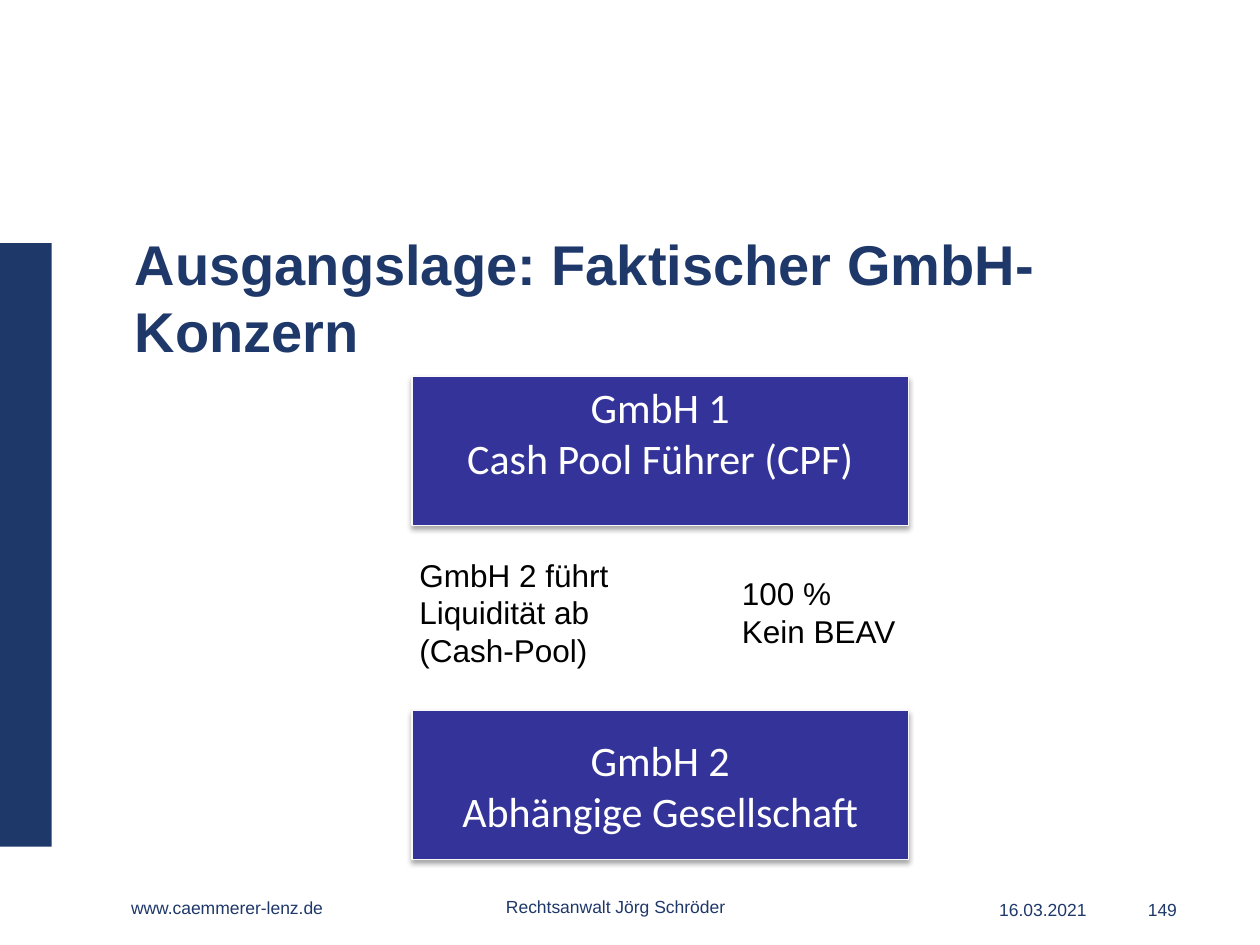
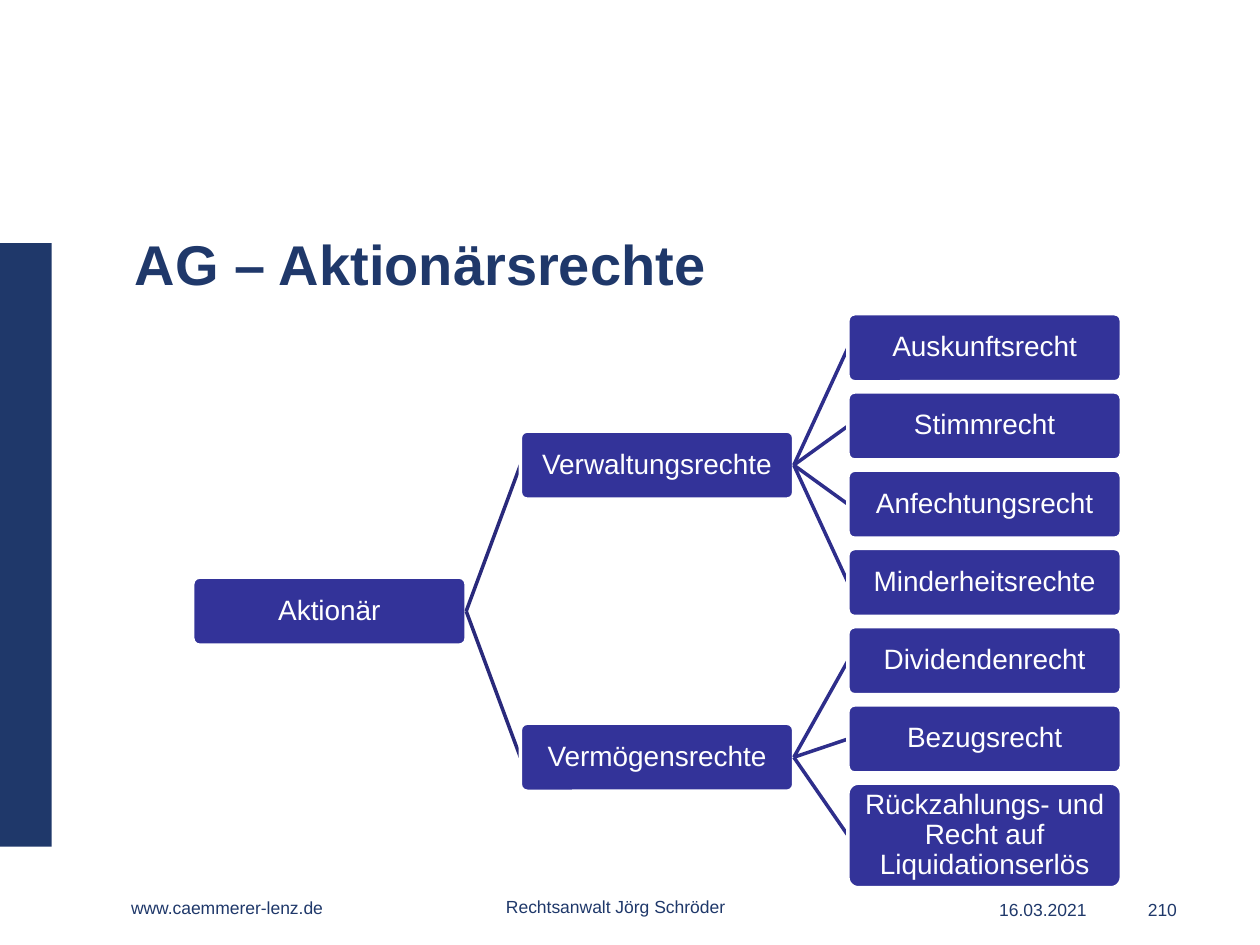
from lxml.etree import SubElement
from pptx import Presentation
from pptx.dml.color import RGBColor
from pptx.enum.shapes import MSO_CONNECTOR, MSO_SHAPE
from pptx.enum.text import MSO_ANCHOR, MSO_AUTO_SIZE, PP_ALIGN
from pptx.oxml import parse_xml
from pptx.oxml.ns import nsdecls, qn
from pptx.util import Inches, Pt

UNIT = Inches(0.1)
NAVY, INDIGO, WHITE, BLACK = "1F386A", "333399", "FFFFFF", "000000"
rgb = RGBColor.from_string


def grid(*cells):
    return [round(cell * UNIT) for cell in cells]


def write(shape, text, size=18, color=BLACK, font="Arial", bold=False,
          align=PP_ALIGN.LEFT, anchor=MSO_ANCHOR.TOP, spacing=1.0, insets=(1, 0.5, 1, 0.5)):
    frame = shape.text_frame
    frame.text = text
    frame.word_wrap = True
    frame.auto_size = MSO_AUTO_SIZE.NONE
    frame.vertical_anchor = anchor
    frame.margin_left, frame.margin_top, frame.margin_right, frame.margin_bottom = grid(*insets)
    for paragraph in frame.paragraphs:
        paragraph.alignment = align
        paragraph.line_spacing = spacing
        paragraph.font.size = Pt(size)
        paragraph.font.name = font
        paragraph.font.bold = bold
        paragraph.font.color.rgb = rgb(color)


deck = Presentation()
deck.slide_width, deck.slide_height = grid(100, 75)

slides = []
for heading, number in [("Ausgangslage: Faktischer GmbH-Konzern", "149"),
                        ("AG – Aktionärsrechte", "210")]:
    slide = deck.slides.add_slide(deck.slide_layouts[5])
    slides.append(slide)

    band = slide.shapes.add_shape(MSO_SHAPE.RECTANGLE, *grid(0, 19.3, 4.1, 47.9))
    band.shadow.inherit = False
    band.fill.solid()
    band.fill.fore_color.rgb = rgb(NAVY)
    band.line.fill.background()

    title = slide.shapes.title
    title.left, title.top, title.width, title.height = grid(9.8, 17.8, 83.6, 8.3)
    write(title, heading, size=32, color=NAVY, bold=True, insets=(0.9, 0.4, 0.9, 0.4))

    for note, left, top, width, align in [
        ("www.caemmerer-lenz.de", 10.4, 70.9, 18.4, PP_ALIGN.LEFT),
        ("Rechtsanwalt Jörg Schröder", 39, 70.8, 19.7, PP_ALIGN.CENTER),
        ("16.03.2021", 79.3, 71, 10.5, PP_ALIGN.LEFT),
        (number, 91.1, 71, 8.9, PP_ALIGN.LEFT),
    ]:
        footer = slide.shapes.add_textbox(*grid(left, top, width, 4))
        write(footer, note, size=10, color=NAVY, align=align, spacing=1.2, insets=(0, 0, 0, 0))

group_slide, rights_slide = slides

for company, top, bottom_inset in [("GmbH 2\nAbhängige Gesellschaft", 56.4, 0.4),
                                   ("GmbH 1\nCash Pool Führer (CPF)", 29.9, 3.4)]:
    company_box = group_slide.shapes.add_shape(MSO_SHAPE.RECTANGLE, *grid(32.7, top, 39.4, 11.8))
    company_box.fill.solid()
    company_box.fill.fore_color.rgb = rgb(INDIGO)
    company_box.line.color.rgb = rgb("F9F9F9")
    company_box.line.width = Pt(0.75)
    company_box._element.spPr.append(parse_xml(
        f'<a:effectLst {nsdecls("a")}><a:outerShdw blurRad="{Pt(3.1)}" dist="{Pt(1.8)}" '
        f'dir="5400000" rotWithShape="0"><a:srgbClr val="{BLACK}"><a:alpha val="35000"/>'
        '</a:srgbClr></a:outerShdw></a:effectLst>'))
    write(company_box, company, size=24, color=WHITE, font="Calibri", align=PP_ALIGN.CENTER,
          anchor=MSO_ANCHOR.MIDDLE, insets=(0.9, 0.4, 0.9, bottom_inset))

for remark, cell in [("100 %\nKein BEAV", (57.9, 45.1, 15.7, 7.1)),
                     ("GmbH 2 führt Liquidität ab (Cash-Pool)", (32.3, 43.6, 18.1, 10.1))]:
    write(group_slide.shapes.add_textbox(*grid(*cell)), remark)

SHAREHOLDER = "Aktionär"
rights = {
    "Verwaltungsrechte": ["Auskunftsrecht", "Stimmrecht", "Anfechtungsrecht", "Minderheitsrechte"],
    "Vermögensrechte": ["Dividendenrecht", "Bezugsrecht",
                        "Rückzahlungs- und Recht auf Liquidationserlös"],
}
NODE_WIDTH, NODE_HEIGHT, TALL_HEIGHT = 21.7, 5.4, 8.3
FIRST_COLUMN, COLUMN_STEP = 15.3, 26
ROW_GAP = NODE_HEIGHT * 0.15

nodes = []
branch_middles = []
next_top = 24.9
for right, claims in rights.items():
    first_top = next_top
    leaves = []
    for claim in claims:
        height = TALL_HEIGHT if len(claim) > 20 else NODE_HEIGHT
        leaves.append((claim, right, 2, next_top, height))
        next_top += height + ROW_GAP
    middle = (first_top + next_top - ROW_GAP) / 2
    branch_middles.append(middle)
    nodes += [(right, SHAREHOLDER, 1, middle - NODE_HEIGHT / 2, NODE_HEIGHT), *leaves]
root_top = sum(branch_middles) / 2 - NODE_HEIGHT / 2
nodes.insert(0, (SHAREHOLDER, None, 0, root_top, NODE_HEIGHT))

drawn = {}
for label, parent, level, top, height in nodes:
    if parent:
        branch = rights_slide.shapes.add_connector(MSO_CONNECTOR.STRAIGHT, 0, 0, 0, 0)
        branch.line.color.rgb = rgb("29297B" if level == 1 else "2E2E8B")
        branch.line.width = Pt(2)
        SubElement(branch._element.spPr, qn("a:effectLst"))
    left = FIRST_COLUMN + level * COLUMN_STEP
    node = rights_slide.shapes.add_shape(MSO_SHAPE.ROUNDED_RECTANGLE,
                                         *grid(left, top, NODE_WIDTH, height))
    node.adjustments[0] = 0.1
    node.shadow.inherit = False
    node.fill.solid()
    node.fill.fore_color.rgb = rgb(INDIGO)
    node.line.color.rgb = rgb(WHITE)
    node.line.width = Pt(2)
    write(node, label, size=16, color=WHITE, align=PP_ALIGN.CENTER,
          anchor=MSO_ANCHOR.MIDDLE, spacing=0.9, insets=(0.3, 0.3, 0.3, 0.3))
    drawn[label] = node
    if parent:
        branch.begin_connect(drawn[parent], 3)
        branch.end_connect(node, 1)

deck.save("out.pptx")
